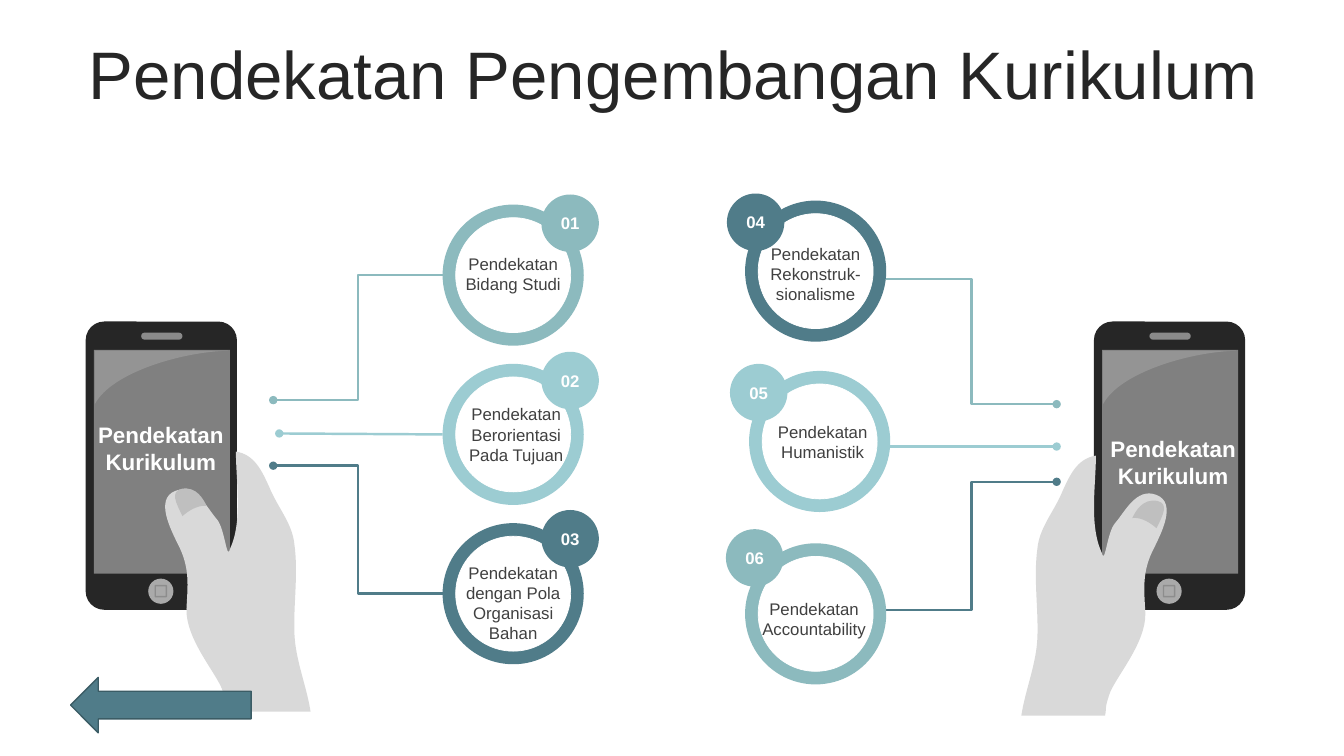
"""Build the slide on approaches to curriculum development."""
from dataclasses import dataclass
from typing import Any, NamedTuple, Optional

import lxml.etree
import pptx
import pptx.dml.color
import pptx.enum.shapes
import pptx.enum.text
import pptx.oxml.ns
import pptx.util

KIND = pptx.enum.shapes.MSO_SHAPE
LINK = pptx.enum.shapes.MSO_CONNECTOR
MID = pptx.enum.text.MSO_ANCHOR.MIDDLE
TOP = pptx.enum.text.MSO_ANCHOR.TOP
PX = 9144
RING, HOLE, BADGE = 140, 114, 57
qn = pptx.oxml.ns.qn


@dataclass(frozen=True)
class Theme:
    font: str = "Arial"
    head: int = 48
    cap: int = 16
    body: int = 12
    white: str = "FFFFFF"
    ink: str = "262626"
    text: str = "404040"
    sage: str = "8CBABE"
    aqua: str = "9CCCD2"
    teal: str = "507C89"
    edge: str = "3B5C65"
    glass: str = "808080"
    pale: str = "ECECEC"
    skin: str = "D9D9D9"
    nail: str = "BFBFBF"


LOOK = Theme()


class Box(NamedTuple):
    x: int
    y: int
    w: int
    h: int


class Node(NamedTuple):
    num: str
    hue: str
    ring: tuple[int, int]
    badge: tuple[int, int]
    label: Box
    text: str


class Wire(NamedTuple):
    kind: Any
    hue: str
    start: tuple[int, int]
    end: tuple[int, int]


class Part(NamedTuple):
    kind: Any
    box: Box
    fill: Optional[str]
    line: Optional[str] = None
    width: float = 1
    alpha: int = 100
    bend: Optional[float] = None


class Curve(NamedTuple):
    box: Box
    legs: list[tuple[int, ...]]
    fill: str
    alpha: int = 100


class Place(NamedTuple):
    dx: int
    dy: int
    flip: bool = False


NODES = [
    Node("01", LOOK.sage, (439, 203), (537, 193), Box(452, 247, 114, 50), "Pendekatan Bidang Studi"),
    Node("02", LOOK.aqua, (439, 361), (537, 349), Box(455, 396, 114, 71), "Pendekatan Berorientasi Pada Tujuan"),
    Node("03", LOOK.teal, (439, 519), (537, 506), Box(452, 553, 114, 91), "Pendekatan dengan Pola Organisasi Bahan"),
    Node("04", LOOK.teal, (739, 199), (721, 192), Box(752, 237, 114, 71), "Pendekatan\nRekonstruk-sionalisme"),
    Node("05", LOOK.aqua, (743, 368), (724, 361), Box(759, 413, 114, 50), "Pendekatan Humanistik"),
    Node("06", LOOK.sage, (739, 539), (720, 525), Box(744, 589, 127, 50), "Pendekatan\nAccountability"),
]
WIRES = [
    Wire(LINK.ELBOW, LOOK.sage, (271, 397), (439, 273)),
    Wire(LINK.STRAIGHT, LOOK.aqua, (277, 430), (439, 431)),
    Wire(LINK.ELBOW, LOOK.teal, (271, 462), (439, 589)),
    Wire(LINK.ELBOW, LOOK.sage, (1048, 401), (879, 277)),
    Wire(LINK.STRAIGHT, LOOK.aqua, (1048, 443), (879, 443)),
    Wire(LINK.ELBOW, LOOK.teal, (1048, 478), (879, 605)),
]
PHONE = [
    Part(KIND.ROUNDED_RECTANGLE, Box(85, 319, 150, 286), LOOK.ink, bend=0.123),
    Part(KIND.RECTANGLE, Box(93, 347, 135, 222), LOOK.glass),
    Part(KIND.ROUNDED_RECTANGLE, Box(140, 330, 41, 7), LOOK.pale, alpha=51, bend=0.5),
    Part(KIND.OVAL, Box(147, 574, 25, 25), LOOK.pale, alpha=67),
    Part(KIND.RECTANGLE, Box(154, 581, 11, 11), None, LOOK.ink, alpha=22),
]
GLARE = Curve(Box(94, 348, 132, 53), [
    (94, 348), (226, 348), (182, 349, 111, 369, 94, 401), (94, 348)], LOOK.white, 16)
HAND = Curve(Box(164, 448, 144, 258), [
    (234, 448), (253, 451, 260, 468, 267, 483), (275, 503, 290, 519, 292, 540),
    (296, 569, 291, 599, 292, 628), (293, 655, 304, 680, 308, 706), (225, 706),
    (223, 697, 226, 700, 220, 683), (213, 666, 184, 633, 185, 604),
    (186, 582, 189, 563, 176, 539), (170, 526, 153, 495, 174, 487),
    (194, 479, 206, 505, 215, 515), (223, 524, 225, 557, 228, 545),
    (241, 517, 234, 478, 234, 448)], LOOK.skin)
NAIL = Curve(Box(174, 485, 32, 27), [
    (180, 485), (195, 482, 202, 496, 205, 502), (199, 501, 190, 504, 181, 512),
    (174, 498, 169, 488, 180, 485)], LOOK.nail)
SIDES = [
    (Place(0, 0), Place(0, 0), Place(0, 0), Box(84, 339, 151, 211)),
    (Place(1000, 0), Place(1321, 4, True), Place(1328, 12, True), Box(1088, 353, 151, 211)),
]
ARROW = Part(KIND.LEFT_ARROW, Box(70, 672, 179, 55), LOOK.teal, LOOK.edge)


def tint(hue: str) -> Any:
    """Turn a hex string into a colour."""
    return pptx.dml.color.RGBColor.from_string(hue)


def scale(vals: tuple[int, ...]) -> list[int]:
    """Turn px into EMU."""
    return [val * PX for val in vals]


def apply(item: Any, vals: dict[str, Any]) -> None:
    """Set each named value on the item."""
    for name, val in vals.items():
        setattr(item, name, val)


def move(shape: Any, box: Box) -> None:
    """Put a shape in its box."""
    apply(shape, dict(zip(("left", "top", "width", "height"), scale(box))))


def paint(shape: Any, fill: Optional[str], line: Optional[str] = None,
          width: float = 1, alpha: int = 100) -> None:
    """Give a shape its fill, line and opacity."""
    shape.shadow.inherit = False
    for form, hue in ((shape.fill, fill), (shape.line.fill, line)):
        if hue:
            form.solid()
            form.fore_color.rgb = tint(hue)
        else:
            form.background()
    if line:
        shape.line.width = pptx.util.Pt(width)
    if alpha < 100:
        for node in shape.element.spPr.iter(qn("a:srgbClr")):
            lxml.etree.SubElement(node, qn("a:alpha"), val=str(alpha * 1000))


def write(shape: Any, text: str, size: int, hue: str, bold: bool = False,
          anchor: Any = MID, pad: int = 0, para: Optional[dict[str, Any]] = None) -> None:
    """Fill a shape with centred text."""
    frame = shape.text_frame
    frame.text = text
    apply(frame, {"word_wrap": True, "vertical_anchor": anchor,
                  "auto_size": pptx.enum.text.MSO_AUTO_SIZE.NONE,
                  "margin_left": pad * PX, "margin_right": pad * PX})
    for line in frame.paragraphs:
        apply(line, {"alignment": pptx.enum.text.PP_ALIGN.CENTER, **(para or {})})
        for run in line.runs:
            apply(run.font, {"name": LOOK.font, "size": pptx.util.Pt(size), "bold": bold})
            run.font.color.rgb = tint(hue)


def draw(shapes: Any, part: Part, dx: int = 0) -> Any:
    """Draw a preset shape."""
    shape = shapes.add_shape(part.kind, *scale(part.box._replace(x=part.box.x + dx)))
    if part.bend is not None:
        shape.adjustments[0] = part.bend
    paint(shape, part.fill, part.line, part.width, part.alpha)
    return shape


def trace(shapes: Any, curve: Curve, place: Place) -> None:
    """Draw a curved outline, moved or mirrored into place."""
    x, y, w, h = curve.box
    legs = [[scale((x + w - a if place.flip else a - x, b - y))
             for a, b in zip(leg[::2], leg[1::2])] for leg in curve.legs]
    form = shapes.build_freeform(*legs[0][0])
    form.add_line_segments([leg[-1] for leg in legs[1:]], close=True)
    shape = form.convert_to_shape()
    move(shape, Box(place.dx - x - w if place.flip else place.dx + x, place.dy + y, w, h))
    track = next(shape.element.iter(qn("a:path")))
    apply(track, {"w": w * PX, "h": h * PX})
    for node, leg in zip(list(track), legs):
        node.tag = qn("a:cubicBezTo") if len(leg) == 3 else node.tag
        node[:] = []
        for a, b in leg:
            lxml.etree.SubElement(node, qn("a:pt"), x=str(a), y=str(b))
    paint(shape, curve.fill, alpha=curve.alpha)


def join(shapes: Any, wire: Wire) -> None:
    """Draw a connector with a round head."""
    link = shapes.add_connector(wire.kind, *scale(wire.start + wire.end))
    link.line.color.rgb = tint(wire.hue)
    link.line.width = pptx.util.Pt(1.75)
    props = link.element.spPr
    lxml.etree.SubElement(props.find(qn("a:ln")), qn("a:headEnd"), type="oval")
    lxml.etree.SubElement(props, qn("a:effectLst"))


def main() -> None:
    """Build and save the slide."""
    deck = pptx.Presentation()
    apply(deck, {"slide_width": pptx.util.Inches(13.33), "slide_height": pptx.util.Inches(7.5)})
    shapes = deck.slides.add_slide(deck.slide_layouts[5]).shapes
    move(shapes.title, Box(35, 38, 1266, 79))
    write(shapes.title, "Pendekatan Pengembangan Kurikulum", LOOK.head, LOOK.ink, pad=10,
          para={"line_spacing": 0.9, "space_before": pptx.util.Pt(10)})
    for wire in WIRES:
        join(shapes, wire)
    gap = (RING - HOLE) // 2
    for node in NODES:
        x, y = node.ring
        draw(shapes, Part(KIND.OVAL, Box(x, y, RING, RING), node.hue))
        draw(shapes, Part(KIND.OVAL, Box(x + gap, y + gap, HOLE, HOLE), LOOK.white, LOOK.white, 0.5))
        label = shapes.add_textbox(*scale(node.label))
        write(label, node.text, LOOK.body, LOOK.text, anchor=TOP, pad=5)
        badge = draw(shapes, Part(KIND.OVAL, Box(*node.badge, BADGE, BADGE), node.hue))
        write(badge, node.num, LOOK.body, LOOK.white, bold=True)
    for phone, hand, nail, box in SIDES:
        for part in PHONE:
            draw(shapes, part, phone.dx)
        for curve, place in ((GLARE, phone), (HAND, hand), (NAIL, nail)):
            trace(shapes, curve, place)
        write(shapes.add_textbox(*scale(box)), "Pendekatan\nKurikulum", LOOK.cap, LOOK.white,
              bold=True, pad=10)
    draw(shapes, ARROW)
    deck.save("out.pptx")


if __name__ == "__main__":
    main()
